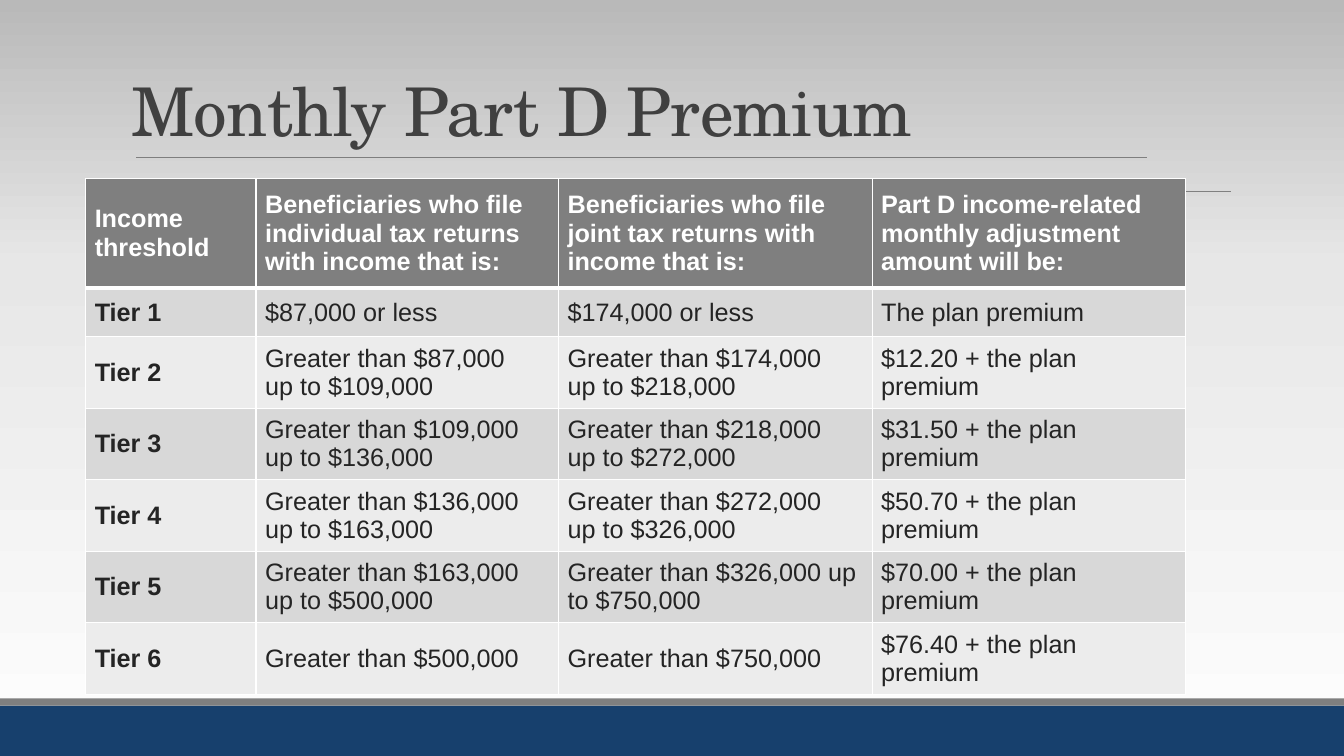
from dataclasses import dataclass

from lxml.etree import SubElement
from pptx import Presentation
from pptx.dml.color import RGBColor
from pptx.enum.shapes import MSO_CONNECTOR, MSO_SHAPE
from pptx.enum.text import MSO_ANCHOR, MSO_AUTO_SIZE, PP_ALIGN
from pptx.oxml.ns import qn
from pptx.slide import Slide
from pptx.table import _Cell
from pptx.text.text import _Paragraph
from pptx.util import Inches, Pt

COLORS = {
    "navy": "17406D", "gray": "7F7F7F", "rule": "808080", "title": "404040",
    "text": "242424", "white": "FFFFFF", "dark_band": "D8D8D8", "light_band": "ECECEC",
    "sky_low": "FEFEFE", "sky_middle": "E7E7E7", "sky_high": "B9B9B9",
}
SKY_STOPS = [(0, "sky_low"), (65, "sky_middle"), (100, "sky_high")]
COLUMN_WIDTHS = [1.69, 3, 3.11, 3.11]
ROW_HEIGHTS = [1.09, 0.48] + [0.71] * 5
HEADINGS = [
    "Income threshold",
    "Beneficiaries who file\nindividual tax returns\nwith income that is:",
    "Beneficiaries who file\njoint tax returns with\nincome that is:",
    "Part D income-related\nmonthly adjustment\namount will be:",
]


@dataclass
class Bar:
    """A full-width footer band."""
    top: float
    height: float
    color: str


@dataclass
class Rule:
    """A horizontal line."""
    left: float
    right: float
    top: float
    color: str
    weight: float


@dataclass
class Tier:
    """The income limits and premium of one tier."""
    individual: str
    joint: str
    premium: str
    spaced: bool = False


BARS = [Bar(7, 0.5, "navy"), Bar(6.93, 0.07, "gray")]
MASTER_RULE = Rule(1.31, 12.21, 1.9, "rule", 0.5)
TITLE_RULE = Rule(1.35, 11.38, 1.56, "gray", 1)
TIERS = [
    Tier("$87,000 or less", "$174,000 or less", "The plan premium"),
    Tier("Greater than $87,000\nup to $109,000",
         "Greater than $174,000\nup to $218,000", "$12.20 + the plan premium"),
    Tier("Greater than $109,000 up to $136,000",
         "Greater than $218,000\nup to $272,000", "$31.50 + the plan premium"),
    Tier("Greater than $136,000 up to $163,000",
         "Greater than $272,000\nup to $326,000", "$50.70 + the plan premium"),
    Tier("Greater than $163,000 up to $500,000",
         "Greater than $326,000 up to $750,000", "$70.00 + the plan premium", True),
    Tier("Greater than $500,000", "Greater than $750,000", "$76.40 + the plan premium", True),
]


def rgb(name: str) -> RGBColor:
    """Return a named colour."""
    return RGBColor.from_string(COLORS[name])


def add_span(para: _Paragraph, text: str, *, font: str, size: float, color: str,
             bold: bool = False, spacing: int = 0) -> None:
    """Add formatted text to a paragraph."""
    span = para.add_run()
    span.text = text
    span.font.name = font
    span.font.size = Pt(size)
    span.font.bold = bold
    span.font.color.rgb = rgb(color)
    if spacing:
        span.font._element.set("spc", str(spacing))


def paint_background(page: Slide) -> None:
    """Fill the page with the vertical gradient."""
    fill = page.background.fill
    fill.gradient()
    fill.gradient_angle = 90
    stops = next(page.element.iter(qn("a:gsLst")))
    for stop in list(stops):
        stops.remove(stop)
    for position, color in SKY_STOPS:
        stop = SubElement(stops, qn("a:gs"), pos=str(position * 1000))
        SubElement(stop, qn("a:srgbClr"), val=COLORS[color])


def draw_bar(page: Slide, bar: Bar, width: int) -> None:
    """Draw a footer band."""
    shape = page.shapes.add_shape(
        MSO_SHAPE.RECTANGLE, 0, Inches(bar.top), width, Inches(bar.height))
    shape.shadow.inherit = False
    shape.fill.solid()
    shape.fill.fore_color.rgb = rgb(bar.color)
    shape.line.fill.background()


def draw_rule(page: Slide, rule: Rule) -> None:
    """Draw a horizontal line without a shadow."""
    line = page.shapes.add_connector(
        MSO_CONNECTOR.STRAIGHT, Inches(rule.left), Inches(rule.top),
        Inches(rule.right), Inches(rule.top))
    line.line.color.rgb = rgb(rule.color)
    line.line.width = Pt(rule.weight)
    SubElement(line._element.spPr, qn("a:effectLst"))


def write_title(page: Slide, text: str) -> None:
    """Place and format the title."""
    box = page.shapes.title
    box.left, box.top = Inches(1.2), Inches(-0.05)
    box.width, box.height = Inches(11), Inches(1.59)
    frame = box.text_frame
    frame.auto_size = MSO_AUTO_SIZE.NONE
    frame.word_wrap = True
    frame.vertical_anchor = MSO_ANCHOR.BOTTOM
    para = frame.paragraphs[0]
    para.alignment = PP_ALIGN.LEFT
    para.line_spacing = 0.85
    add_span(para, text, font="TeX Gyre Schola", size=48, color="title", spacing=-50)


def format_cell(cell: _Cell, text: str, *, fill: str, color: str, bold: bool,
                spaced: bool, top: float = 1, bottom: float = 1) -> None:
    """Write a cell with its borders and fill."""
    properties = cell._tc.get_or_add_tcPr()
    for side, weight in {"L": 1, "R": 1, "T": top, "B": bottom}.items():
        border = SubElement(properties, qn(f"a:ln{side}"), w=str(Pt(weight)))
        solid = SubElement(border, qn("a:solidFill"))
        SubElement(solid, qn("a:srgbClr"), val=COLORS["white"])
    cell.fill.solid()
    cell.fill.fore_color.rgb = rgb(fill)
    cell.vertical_anchor = MSO_ANCHOR.MIDDLE
    cell.margin_left = cell.margin_right = Inches(0.09)
    cell.margin_top = cell.margin_bottom = Inches(0.04)
    frame = cell.text_frame
    for index, line in enumerate(text.split("\n")):
        para = frame.add_paragraph() if index else frame.paragraphs[0]
        if spaced:
            para.space_before = para.space_after = Pt(6)
        add_span(para, line, font="Arial", size=18, color=color, bold=bold)


def draw_premium_table(page: Slide) -> None:
    """Draw the table of tiers and premiums."""
    table = page.shapes.add_table(
        len(ROW_HEIGHTS), len(COLUMN_WIDTHS), Inches(0.85), Inches(1.77),
        Inches(sum(COLUMN_WIDTHS)), Inches(sum(ROW_HEIGHTS))).table
    for column, width in zip(table.columns, COLUMN_WIDTHS):
        column.width = Inches(width)
    for row, height in zip(table.rows, ROW_HEIGHTS):
        row.height = Inches(height)
    for column, heading in enumerate(HEADINGS):
        format_cell(table.cell(0, column), heading, fill="gray", color="white",
                    bold=True, spaced=False, bottom=3)
    for number, tier in enumerate(TIERS, 1):
        values = [f"Tier {number}", tier.individual, tier.joint, tier.premium]
        for column, value in enumerate(values):
            format_cell(table.cell(number, column), value,
                        fill="dark_band" if number % 2 else "light_band",
                        color="text", bold=column == 0,
                        spaced=tier.spaced or column in (0, 3),
                        top=3 if number == 1 else 1)


def main() -> None:
    """Build and save the deck."""
    deck = Presentation()
    deck.slide_width, deck.slide_height = Inches(13.33), Inches(7.5)
    page = deck.slides.add_slide(deck.slide_layouts.get_by_name("Title Only"))
    paint_background(page)
    for bar in BARS:
        draw_bar(page, bar, deck.slide_width)
    draw_rule(page, MASTER_RULE)
    draw_premium_table(page)
    write_title(page, "Monthly Part D Premium")
    draw_rule(page, TITLE_RULE)
    deck.save("out.pptx")


if __name__ == "__main__":
    main()
